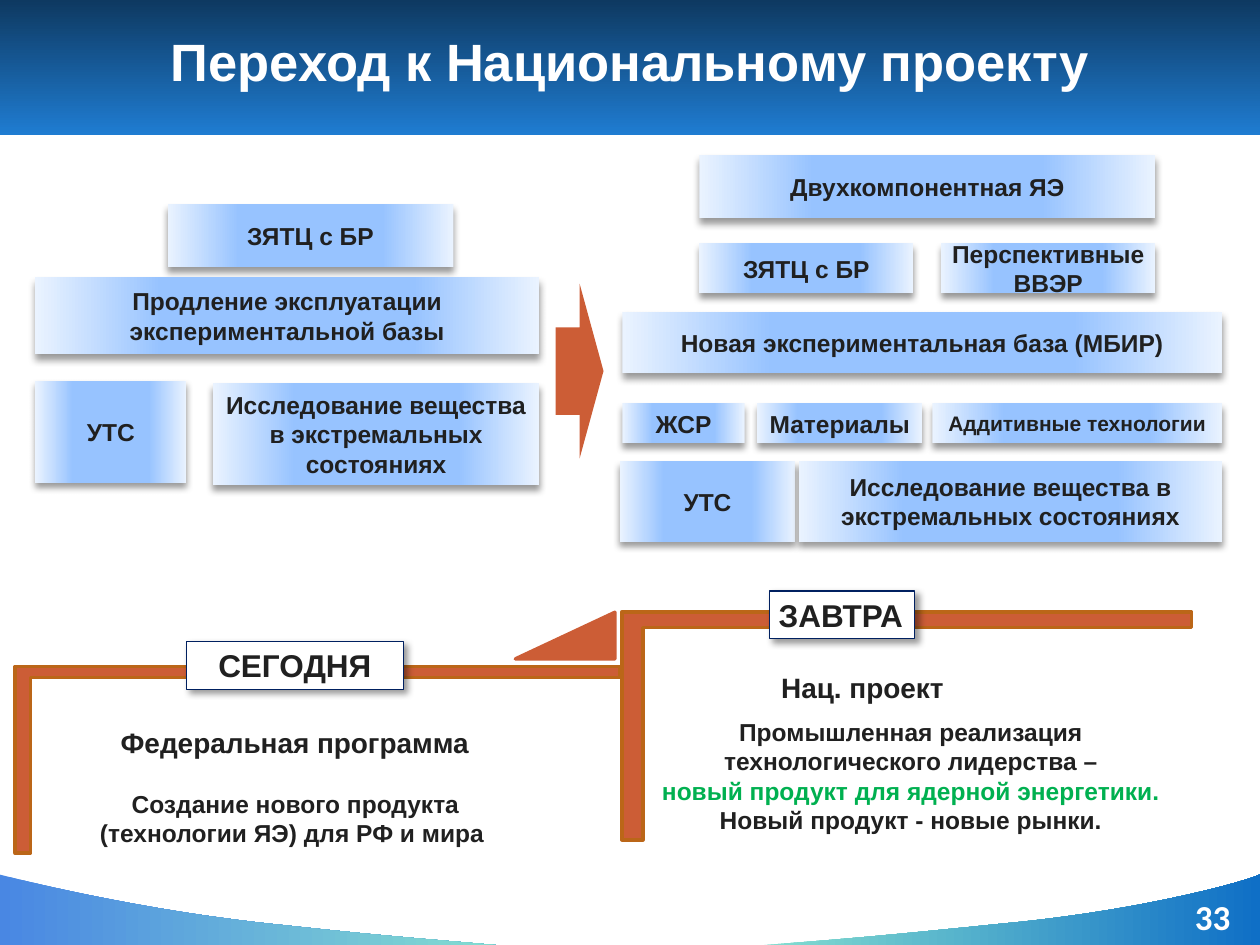
from dataclasses import dataclass
from typing import NamedTuple

from lxml.etree import SubElement
from pptx import Presentation
from pptx.dml.color import RGBColor
from pptx.enum.shapes import MSO_SHAPE as Preset
from pptx.enum.text import MSO_ANCHOR as Anchor, MSO_AUTO_SIZE as AutoSize, PP_ALIGN as Align
from pptx.oxml.ns import qn
from pptx.util import Inches, Pt

Stops = tuple[tuple[int, str], ...]
Point = tuple[float, float]
Frame = NamedTuple("Frame", [("left", float), ("top", float), ("width", float), ("height", float)])
Block = NamedTuple("Block", [("text", str), ("frame", Frame), ("size", int)])
Wave = NamedTuple("Wave", [("start", Point), ("curves", tuple), ("corner", Point), ("stops", Stops)])


@dataclass(frozen=True)
class Theme:
    font: str = "Arial"
    number_font: str = "Calibri"
    ink: str = "202020"
    white: str = "FFFFFF"
    green: str = "00B050"
    rust: str = "CC5D36"
    rust_edge: str = "BB6618"
    navy: str = "002060"
    shade: str = "000000"
    banner: Stops = ((0, "0E3961"), (100, "1F7CD1"))
    left_wave: Stops = ((0, "4987E3"), (100, "85DFD0"))
    right_wave: Stops = ((2, "85DFD0"), (100, "0F6FC6"))
    block: Stops = ((0, "EAF3FF"), (25, "97C3FF"), (75, "97C3FF"), (100, "EAF3FF"))
    title: int = 30
    number: int = 20
    label: int = 18
    heading: int = 16
    body: int = 14
    small: int = 12


THEME = Theme()


@dataclass(frozen=True)
class Span:
    text: str
    size: int = THEME.body
    color: str = THEME.ink
    font: str = THEME.font
    break_after: bool = False


@dataclass(frozen=True)
class Note:
    frame: Frame
    paras: tuple[tuple[Span, ...], ...]
    wrap: bool = True
    inset: Point = (0.07, 0.04)


BLOCKS = (
    Block("ЗЯТЦ с БР", Frame(1.33, 1.62, 2.27, 0.5), THEME.body),
    Block("Продление эксплуатации экспериментальной базы", Frame(0.28, 2.2, 4, 0.61), THEME.body),
    Block("УТС", Frame(0.28, 3.02, 1.2, 0.81), THEME.body),
    Block("Исследование вещества в экстремальных состояниях", Frame(1.69, 3.04, 2.59, 0.81), THEME.body),
    Block("Двухкомпонентная ЯЭ", Frame(5.55, 1.23, 3.62, 0.5), THEME.body),
    Block("ЗЯТЦ с БР", Frame(5.55, 1.93, 1.7, 0.4), THEME.body),
    Block("Перспективные ВВЭР", Frame(7.47, 1.93, 1.7, 0.4), THEME.body),
    Block("УТС", Frame(4.92, 3.66, 1.39, 0.64), THEME.body),
    Block("Исследование вещества в экстремальных состояниях", Frame(6.34, 3.66, 3.36, 0.64), THEME.body),
    Block("Новая экспериментальная база (МБИР)", Frame(4.94, 2.48, 4.76, 0.48), THEME.body),
    Block("ЖСР", Frame(4.94, 3.2, 0.97, 0.32), THEME.body),
    Block("Материалы", Frame(6.01, 3.2, 1.31, 0.32), THEME.body),
    Block("Аддитивные технологии", Frame(7.4, 3.2, 2.3, 0.32), THEME.small),
)
LABELS = (
    Note(Frame(1.48, 5.09, 1.72, 0.38), ((Span("СЕГОДНЯ", THEME.label),),)),
    Note(Frame(6.11, 4.69, 1.15, 0.38), ((Span("ЗАВТРА", THEME.label),),), wrap=False),
)
NOTES = (
    Note(Frame(0.67, 6.22, 3.35, 0.55),
         ((Span("Создание нового продукта (технологии ЯЭ) для РФ и мира "),),)),
    Note(Frame(5, 5.65, 4.46, 1.02),
         ((Span("Промышленная реализация технологического лидерства –", break_after=True),
           Span("новый продукт для ядерной энергетики.", color=THEME.green)),
          (Span("Новый продукт - новые рынки."),))),
    Note(Frame(0.8, 5.72, 3.08, 0.34), ((Span("Федеральная программа", THEME.heading),),)),
    Note(Frame(6.13, 5.28, 1.46, 0.34), ((Span("Нац. проект", THEME.heading),),), wrap=False),
    Note(Frame(9.33, 7.11, 0.59, 0.35),
         ((Span("33", THEME.number, THEME.white, THEME.number_font),),), inset=(0, 0)),
)
WAVES = (
    Wave((4.04, 7.51), (((3.37, 7.45), (3.14, 7.44), (2.04, 7.32)),
                        ((0.92, 7.19), (0, 6.94), (-0.01, 6.94))), (-0.01, 7.51), THEME.left_wave),
    Wave((5.94, 7.51), (((6.6, 7.46), (6.88, 7.44), (7.96, 7.33)),
                        ((9.05, 7.23), (9.91, 6.99), (10, 6.94))), (10, 7.51), THEME.right_wave),
)


def paint(shape, color: str, edge: str = "", weight: float = 0) -> None:
    """Give a shape a plain fill and an optional outline."""
    shape.shadow.inherit = False
    shape.fill.solid()
    shape.fill.fore_color.rgb = RGBColor.from_string(color)
    shape.line.fill.background()
    if edge:
        shape.line.color.rgb = RGBColor.from_string(edge)
        shape.line.width = Pt(weight)


def paint_gradient(shape, stops: Stops, angle: int = 0) -> None:
    """Give a shape a linear gradient and no outline."""
    shape.shadow.inherit = False
    shape.line.fill.background()
    shape.fill.gradient()
    shape.fill.gradient_angle = angle
    stop_list = next(shape.element.iter(qn("a:gsLst")))
    for old in list(stop_list):
        stop_list.remove(old)
    for position, color in stops:
        SubElement(SubElement(stop_list, qn("a:gs"), pos=str(position * 1000)), qn("a:srgbClr"), val=color)


def cast_shadow(shape, direction: int) -> None:
    """Add a soft outer shadow in a direction given in degrees."""
    effects = next(shape.element.iter(qn("a:effectLst")))
    shadow = SubElement(effects, qn("a:outerShdw"), blurRad=str(Pt(4)), dist=str(Pt(3)),
                        dir=str(direction * 60000), algn="ctr", rotWithShape="0")
    SubElement(SubElement(shadow, qn("a:srgbClr"), val=THEME.shade), qn("a:alpha"), val="40000")


def write(shape, paras: tuple, inset: Point, anchor: Anchor = Anchor.TOP, wrap: bool = True) -> None:
    """Write bold paragraphs, centred when the text wraps."""
    box = shape.text_frame
    box.word_wrap, box.vertical_anchor = wrap, anchor
    box.margin_left = box.margin_right = Inches(inset[0])
    box.margin_top = box.margin_bottom = Inches(inset[1])
    for index, spans in enumerate(paras):
        para = box.add_paragraph() if index else box.paragraphs[0]
        para.alignment = Align.CENTER if wrap else Align.LEFT
        for span in spans:
            run = para.add_run()
            run.text = span.text
            run.font.name, run.font.size, run.font.bold = span.font, Pt(span.size), True
            run.font.color.rgb = RGBColor.from_string(span.color)
            if span.break_after:
                para.add_line_break()


def draw_wave(page, wave: Wave, steps: int = 24) -> None:
    """Draw one wave by sampling its cubic curves."""
    points = [wave.start]
    for first, second, end in wave.curves:
        controls = tuple(zip(points[-1], first, second, end))
        for t in (step / steps for step in range(1, steps + 1)):
            weights = ((1 - t) ** 3, 3 * t * (1 - t) ** 2, 3 * t * t * (1 - t), t ** 3)
            points.append(tuple(sum(w * c for w, c in zip(weights, axis)) for axis in controls))
    outline = [(Inches(x), Inches(y)) for x, y in (*points, wave.corner)]
    builder = page.shapes.build_freeform(*outline[0])
    builder.add_line_segments(outline[1:])
    paint_gradient(builder.convert_to_shape(), wave.stops)


def draw_shape(page, preset: Preset, frame: Frame, adjustments: tuple[float, ...] = (), turn: int = 0):
    """Add a preset shape with its adjustments and rotation."""
    shape = page.shapes.add_shape(preset, *map(Inches, frame))
    for index, value in enumerate(adjustments):
        shape.adjustments[index] = value
    shape.rotation = turn
    return shape


def draw_block(page, block: Block) -> None:
    """Draw a gradient block with centred text."""
    shape = draw_shape(page, Preset.RECTANGLE, block.frame)
    paint_gradient(shape, THEME.block)
    cast_shadow(shape, 90)
    write(shape, ((Span(block.text, block.size),),), (0.08, 0.04), Anchor.MIDDLE)


def draw_label(page, note: Note) -> None:
    """Draw a white framed label."""
    shape = draw_shape(page, Preset.RECTANGLE, note.frame)
    paint(shape, THEME.white, THEME.navy, 0.75)
    cast_shadow(shape, 45)
    write(shape, note.paras, note.inset, wrap=note.wrap)
    shape.text_frame.auto_size = AutoSize.SHAPE_TO_FIT_TEXT


def draw_title(page, text: str) -> None:
    """Place the title above the banner."""
    title = page.shapes.title
    title.left, title.top, title.width, title.height = map(Inches, Frame(0, -0.03, 10, 1.09))
    write(title, ((Span(text, THEME.title, THEME.white),),), (0.04, 0.04), Anchor.MIDDLE)
    title.text_frame.paragraphs[0].line_spacing = 0.9
    title.element.getparent().append(title.element)


deck = Presentation()
deck.slide_width, deck.slide_height = Inches(10), Inches(7.5)
page = deck.slides.add_slide(deck.slide_layouts[5])
paint_gradient(draw_shape(page, Preset.RECTANGLE, Frame(0, 0, 10, 1.07)), THEME.banner, 270)
for wave in WAVES:
    draw_wave(page, wave)
draw_title(page, "Переход к Национальному проекту")
for frame, bends in ((Frame(1.78, 3.63, 1.48, 4.8), (0.082, 0.059)),
                     (Frame(6.29, 3.5, 1.81, 4.52), (0.092, 0.07))):
    paint(draw_shape(page, Preset.CORNER, frame, bends, 90), THEME.rust, THEME.rust_edge, 2)
ramp = draw_shape(page, Preset.ISOSCELES_TRIANGLE, Frame(4.09, 4.86, 0.79, 0.37), (1,))
paint(ramp, THEME.rust, THEME.rust, 2)
for label in LABELS:
    draw_label(page, label)
for note in NOTES:
    write(page.shapes.add_textbox(*map(Inches, note.frame)), note.paras, note.inset, wrap=note.wrap)
paint(draw_shape(page, Preset.RIGHT_ARROW, Frame(4.41, 2.25, 0.38, 1.39)), THEME.rust)
for block in BLOCKS:
    draw_block(page, block)
deck.save("out.pptx")
